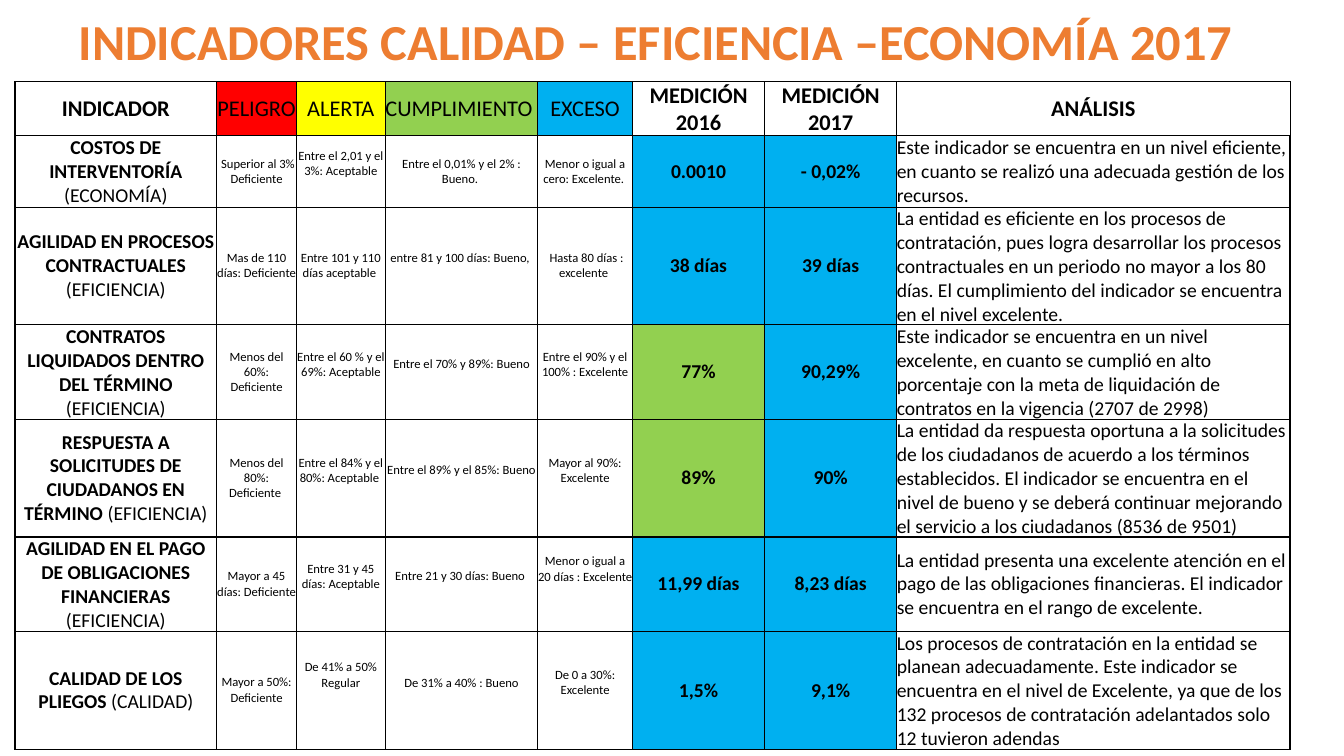
from lxml import etree
from pptx import Presentation
from pptx import util as u
from pptx.dml.color import RGBColor
from pptx.enum import text
from pptx.oxml import ns

RED, YELLOW, GREEN, BLUE, WHITE = "FF0000", "FFFF00", "92D050", "00B0F0", "FFFFFF"
COLUMN_WIDTHS = [5.08, 2.01, 2.24, 3.84, 2.39, 3.33, 3.33, 9.91]
ROW_HEIGHTS = [1.36, 1.8, 2.95, 2.38, 2.95, 2.38, 2.95]
HEADERS = [
    ("INDICADOR", WHITE, True), ("PELIGRO", RED, False), ("ALERTA", YELLOW, False),
    ("CUMPLIMIENTO ", GREEN, False), ("EXCESO", BLUE, False),
    ("MEDICIÓN 2016", None, True), ("MEDICIÓN 2017", None, True), ("ANÁLISIS", None, True),
]
# Indicator, kind, four (range, lines raised) pairs, 2016 value and fill, 2017 value, analysis
INDICATORS = [
    ("COSTOS DE INTERVENTORÍA ", "(ECONOMÍA)",
     [(" Superior al 3% Deficiente", 0), ("Entre el 2,01 y el 3%: Aceptable", 1),
      ("Entre el 0,01% y el 2% : Bueno. ", 0), ("Menor o igual a cero: Excelente. ", 0)],
     "0.0010", BLUE, "- 0,02%",
     "Este indicador se encuentra en un nivel eficiente, en cuanto se realizó una adecuada "
     "gestión de los recursos."),
    ("AGILIDAD EN PROCESOS CONTRACTUALES ", "(EFICIENCIA)",
     [("Mas de 110 días: Deficiente ", 0), ("Entre 101 y 110 días aceptable ", 0),
      ("entre 81 y 100 días: Bueno, ", 1), (" Hasta 80 días : excelente ", 0)],
     "38 días", BLUE, "39 días",
     "La entidad es eficiente en los procesos de contratación, pues logra desarrollar los "
     "procesos contractuales en un periodo no mayor a los 80 días. El cumplimiento del "
     "indicador se encuentra en el nivel excelente."),
    ("CONTRATOS LIQUIDADOS DENTRO DEL TÉRMINO ", "(EFICIENCIA)",
     [("Menos del 60%: Deficiente", 0), ("Entre el 60 % y el 69%: Aceptable", 1),
      ("Entre el 70% y 89%: Bueno", 1), ("Entre el 90% y el 100% : Excelente", 1)],
     "77%", GREEN, "90,29%",
     "Este indicador se encuentra en un nivel excelente, en cuanto se cumplió en alto "
     "porcentaje con la meta de liquidación de contratos en la vigencia (2707 de 2998)"),
    ("RESPUESTA A SOLICITUDES DE CIUDADANOS EN TÉRMINO ", "(EFICIENCIA)",
     [("Menos del 80%: Deficiente ", 0), ("Entre el 84% y el 80%: Aceptable ", 1),
      ("Entre el 89% y el 85%: Bueno", 1), ("Mayor al 90%: Excelente", 1)],
     "89%", GREEN, "90%",
     "La entidad da respuesta oportuna a la solicitudes de los ciudadanos de acuerdo a los "
     "términos establecidos. El indicador se encuentra en el nivel de bueno y se deberá "
     "continuar mejorando el servicio a los ciudadanos (8536 de 9501)"),
    ("AGILIDAD EN EL PAGO DE OBLIGACIONES FINANCIERAS ", "(EFICIENCIA)",
     [("Mayor a 45 días: Deficiente ", 0), ("Entre 31 y 45 días: Aceptable", 1),
      ("Entre 21 y 30 días: Bueno ", 1), ("Menor o igual a 20 días : Excelente ", 2)],
     "11,99 días", BLUE, "8,23 días",
     "La entidad presenta una excelente atención en el pago de las obligaciones financieras. "
     "El indicador se encuentra en el rango de excelente."),
    ("CALIDAD DE LOS PLIEGOS ", "(CALIDAD)",
     [("Mayor a 50%: Deficiente", 0), ("De 41% a 50% Regular", 2),
      ("De 31% a 40% : Bueno", 1), ("De 0 a 30%: Excelente", 1)],
     "1,5%", BLUE, "9,1%",
     "Los procesos de contratación en la entidad se planean adecuadamente. Este indicador se "
     "encuentra en el nivel de Excelente, ya que de los 132 procesos de contratación "
     "adelantados solo 12 tuvieron adendas"),
]


def color(code):
    return RGBColor.from_string(code)


class IndicatorPage:
    """Holds the text style and the slide being filled."""

    font_name = "Calibri"
    line_color = "000000"
    small_line = 0.38  # height of one line of range text, in cm

    def __init__(self, deck):
        self.page = deck.slides.add_slide(deck.slide_layouts[5])

    def style(self, para, size, code="000000", bold=None, align=text.PP_ALIGN.CENTER):
        para.alignment = align
        font = para.font
        font.name, font.size, font.bold = self.font_name, u.Pt(size), bold
        font.color.rgb = color(code)

    def title(self, words, left, top, width, height):
        box = self.page.shapes.title
        box.left, box.top, box.width, box.height = map(u.Cm, (left, top, width, height))
        frame = box.text_frame
        frame.text = words
        frame.word_wrap = True
        frame.auto_size = text.MSO_AUTO_SIZE.SHAPE_TO_FIT_TEXT
        frame.vertical_anchor = text.MSO_ANCHOR.TOP
        para = frame.paragraphs[0]
        para.line_spacing, para.space_before, para.space_after = 1.07, u.Pt(0), u.Pt(8)
        self.style(para, 36, "ED7D31", True)

    def table(self, left, top, widths, heights):
        frame = self.page.shapes.add_table(
            len(heights), len(widths), u.Cm(left), u.Cm(top),
            u.Cm(sum(widths)), u.Cm(sum(heights)))
        grid = frame.table
        grid.first_row = grid.horz_banding = False
        for column, width in zip(grid.columns, widths):
            column.width = u.Cm(width)
        for row, height in zip(grid.rows, heights):
            row.height = u.Cm(height)
        return grid

    def cell(self, cell, spans, size, fill=None, raised=0, side_lines=(1, 1), **style):
        """Fill a cell with (words, bold) spans, raised by half a line per unit."""
        cell.margin_left = cell.margin_right = cell.margin_top = 0
        cell.margin_bottom = u.Cm(raised * self.small_line)
        cell.vertical_anchor = text.MSO_ANCHOR.MIDDLE
        if fill:
            cell.fill.solid()
            cell.fill.fore_color.rgb = color(fill)
        else:
            cell.fill.background()
        para = cell.text_frame.paragraphs[0]
        same_weight = len({bold for _, bold in spans}) == 1
        self.style(para, size, bold=spans[0][1] if same_weight else None, **style)
        for words, bold in spans:
            span = para.add_run()
            span.text = words
            if not same_weight:
                span.font.bold = bold
        self.borders(cell, (*side_lines, 1, 1))

    def borders(self, cell, widths):
        """Draw the left, right, top and bottom lines, with widths in points."""
        properties = cell._tc.get_or_add_tcPr()
        for position, (side, width) in enumerate(zip("LRTB", widths)):
            line = etree.Element(ns.qn(f"a:ln{side}"), w=str(u.Pt(width)))
            solid = etree.SubElement(line, ns.qn("a:solidFill"))
            etree.SubElement(solid, ns.qn("a:srgbClr"), val=self.line_color)
            properties.insert(position, line)


def main():
    deck = Presentation()
    deck.slide_width, deck.slide_height = u.Cm(33.87), u.Cm(19.05)
    page = IndicatorPage(deck)
    page.title("INDICADORES CALIDAD – EFICIENCIA –ECONOMÍA 2017", 0.91, 0.03, 31.24, 1.9)
    grid = page.table(0.38, 2.06, COLUMN_WIDTHS, ROW_HEIGHTS)

    for column, (words, fill, bold) in enumerate(HEADERS):
        sides = (1 if column < 2 else 0.5, 1 if column == 0 else 0.5)
        page.cell(grid.cell(0, column), [(words, bold)], 16, fill, side_lines=sides)

    for row, indicator in enumerate(INDICATORS, start=1):
        name, kind, ranges, value_2016, fill_2016, value_2017, analysis = indicator
        page.cell(grid.cell(row, 0), [(name, True), (kind, False)], 14, WHITE)
        for column, (words, raised) in enumerate(ranges, start=1):
            page.cell(grid.cell(row, column), [(words, False)], 9, raised=raised)
        page.cell(grid.cell(row, 5), [(value_2016, True)], 14, fill_2016)
        page.cell(grid.cell(row, 6), [(value_2017, True)], 14, BLUE)
        page.cell(grid.cell(row, 7), [(analysis, False)], 14, align=text.PP_ALIGN.LEFT)

    deck.save("out.pptx")


if __name__ == "__main__":
    main()
